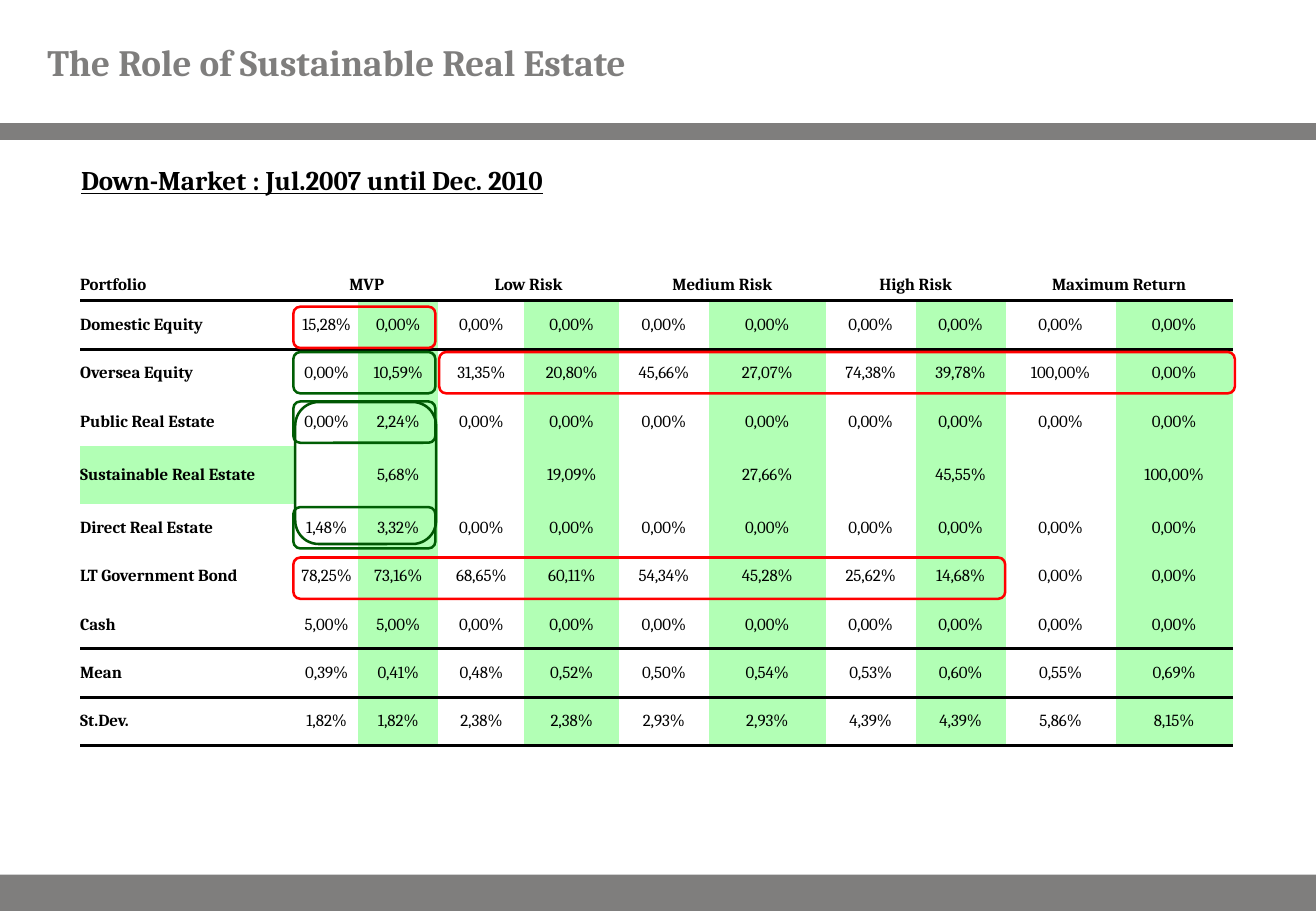
from lxml import etree
from pptx import Presentation
from pptx.dml.color import RGBColor
from pptx.enum import shapes, text
from pptx.oxml import ns
from pptx.util import Pt

GRAY = RGBColor(0x7F, 0x7E, 0x7D)
BLACK = RGBColor(0x00, 0x00, 0x00)
MINT = RGBColor(0xB2, 0xFF, 0xB5)
RED = RGBColor(0xFF, 0x00, 0x00)
GREEN = RGBColor(0x00, 0x5E, 0x04)
DARK_GREEN = RGBColor(0x00, 0x56, 0x03)

FONT = "Cambria"
WIDTH, HEIGHT = 780, 540
PLAIN_TABLE_STYLE = "{2D5ABB26-0587-4C30-8999-92F81FD0307C}"

GROUPS = ["MVP", "Low Risk", "Medium Risk", "High Risk", "Maximum Return"]
ROWS = [
    ("Domestic Equity", "15,28%|0,00%|0,00%|0,00%|0,00%|0,00%|0,00%|0,00%|0,00%|0,00%"),
    ("Oversea Equity", "0,00%|10,59%|31,35%|20,80%|45,66%|27,07%|74,38%|39,78%|100,00%|0,00%"),
    ("Public Real Estate", "0,00%|2,24%|0,00%|0,00%|0,00%|0,00%|0,00%|0,00%|0,00%|0,00%"),
    ("Sustainable Real Estate", "|5,68%||19,09%||27,66%||45,55%||100,00%"),
    ("Direct Real Estate", "1,48%|3,32%|0,00%|0,00%|0,00%|0,00%|0,00%|0,00%|0,00%|0,00%"),
    ("LT Government Bond", "78,25%|73,16%|68,65%|60,11%|54,34%|45,28%|25,62%|14,68%|0,00%|0,00%"),
    ("Cash", "5,00%|5,00%|0,00%|0,00%|0,00%|0,00%|0,00%|0,00%|0,00%|0,00%"),
    ("Mean", "0,39%|0,41%|0,48%|0,52%|0,50%|0,54%|0,53%|0,60%|0,55%|0,69%"),
    ("St.Dev.", "1,82%|1,82%|2,38%|2,38%|2,93%|2,93%|4,39%|4,39%|5,86%|8,15%"),
]
COLUMN_WIDTHS = [127.4, 37.4, 47.5, 51.1, 56, 53.3, 69.3, 53.3, 53.3, 65.3, 69.3]
HEADER_HEIGHT, ROW_HEIGHT, SUSTAINABLE_HEIGHT = 19.3, 28.65, 34.4
SUSTAINABLE_ROW = 4
RULED_ROWS = (0, 7, 9)

# Highlight frames: left, top, width, height from the table corner, colour
FRAMES = [
    (212.8, 49.6, 471.6, 24.5, RED),
    (126.4, 78.9, 84.2, 24.5, GREEN),
    (126.4, 141.5, 84.2, 24.5, GREEN),
    (126.4, 171.4, 421.9, 24.5, RED),
    (126.4, 22.7, 84.2, 24.5, RED),
    (126.4, 49.6, 84.2, 24.5, GREEN),
    (127.5, 79.2, 83.5, 84.2, DARK_GREEN),
]


def format_text(paragraph, size, color, bold=True, underline=None):
    for run in paragraph.runs:
        run.font.name = FONT
        run.font.size = Pt(size)
        run.font.bold = bold
        run.font.underline = underline
        run.font.color.rgb = color


def add_bars(slide, left, width, line_y, footer_top):
    rule = slide.shapes.add_connector(
        shapes.MSO_CONNECTOR.STRAIGHT, Pt(left), Pt(line_y), Pt(left + width), Pt(line_y))
    rule.line.color.rgb = GRAY
    rule.line.width = Pt(10)
    properties = rule.element.find(ns.qn("p:spPr"))
    etree.SubElement(properties, ns.qn("a:effectLst"))
    footer = slide.shapes.add_shape(
        shapes.MSO_SHAPE.RECTANGLE, Pt(left), Pt(footer_top), Pt(width), Pt(HEIGHT - footer_top))
    footer.shadow.inherit = False
    footer.fill.solid()
    footer.fill.fore_color.rgb = GRAY
    footer.line.fill.background()


def add_title(slide, left, top, width, height):
    title = slide.shapes.title
    title.left, title.top, title.width, title.height = Pt(left), Pt(top), Pt(width), Pt(height)
    frame = title.text_frame
    frame.text = "The Role of Sustainable Real Estate"
    frame.auto_size = text.MSO_AUTO_SIZE.NONE
    frame.vertical_anchor = text.MSO_ANCHOR.MIDDLE
    frame.margin_left = frame.margin_right = Pt(28)
    frame.margin_top = frame.margin_bottom = 0
    frame.paragraphs[0].alignment = text.PP_ALIGN.LEFT
    format_text(frame.paragraphs[0], 22, GRAY)


def add_subtitle(slide, left, top, width, height):
    box = slide.shapes.add_textbox(Pt(left), Pt(top), Pt(width), Pt(height))
    box.text_frame.word_wrap = True
    box.text_frame.text = "Down-Market : Jul.2007 until Dec. 2010"
    format_text(box.text_frame.paragraphs[0], 16, BLACK, underline=True)


def add_border(cell, side):
    properties = cell._tc.get_or_add_tcPr()
    line = etree.SubElement(properties, ns.qn("a:" + side), w=str(Pt(2)))
    fill = etree.SubElement(line, ns.qn("a:solidFill"))
    etree.SubElement(fill, ns.qn("a:srgbClr"), val=str(BLACK))


def format_cell(cell, row, column):
    cell.margin_left = cell.margin_right = cell.margin_top = cell.margin_bottom = 0
    cell.vertical_anchor = text.MSO_ANCHOR.MIDDLE
    if row - 1 in RULED_ROWS:
        add_border(cell, "lnT")
    if row in RULED_ROWS:
        add_border(cell, "lnB")
    sustainable_column = row > 0 and column > 0 and column % 2 == 0
    if sustainable_column or (row, column) == (SUSTAINABLE_ROW, 0):
        cell.fill.solid()
        cell.fill.fore_color.rgb = MINT
    else:
        cell.fill.background()
    paragraph = cell.text_frame.paragraphs[0]
    paragraph.alignment = text.PP_ALIGN.CENTER if column else text.PP_ALIGN.LEFT
    format_text(paragraph, 10, BLACK, bold=row == 0 or column == 0)


def add_portfolio_table(slide, left, top):
    heights = [HEADER_HEIGHT] + [ROW_HEIGHT] * len(ROWS)
    heights[SUSTAINABLE_ROW] = SUSTAINABLE_HEIGHT
    table = slide.shapes.add_table(
        len(heights), len(COLUMN_WIDTHS), Pt(left), Pt(top),
        Pt(sum(COLUMN_WIDTHS)), Pt(sum(heights))).table
    table.first_row = table.horz_banding = False
    table._tbl.tblPr.find(ns.qn("a:tableStyleId")).text = PLAIN_TABLE_STYLE
    for column, width in zip(table.columns, COLUMN_WIDTHS):
        column.width = Pt(width)
    for row, height in zip(table.rows, heights):
        row.height = Pt(height)

    # Each heading spans a pair of columns
    header = ["Portfolio"]
    for group in GROUPS:
        header += [group, ""]
    for column in range(1, len(COLUMN_WIDTHS), 2):
        table.cell(0, column).merge(table.cell(0, column + 1))

    lines = [header] + [[label] + values.split("|") for label, values in ROWS]
    for row, line in enumerate(lines):
        for column, value in enumerate(line):
            cell = table.cell(row, column)
            if value:
                cell.text_frame.text = value
            format_cell(cell, row, column)


def add_highlights(slide, left, top):
    for x, y, width, height, color in FRAMES:
        frame = slide.shapes.add_shape(
            shapes.MSO_SHAPE.ROUNDED_RECTANGLE,
            Pt(left + x), Pt(top + y), Pt(width), Pt(height))
        frame.shadow.inherit = False
        frame.fill.background()
        frame.line.color.rgb = color
        frame.line.width = Pt(1.5)


def main():
    presentation = Presentation()
    presentation.slide_width, presentation.slide_height = Pt(WIDTH), Pt(HEIGHT)
    slide = presentation.slides.add_slide(presentation.slide_layouts[5])
    add_bars(slide, 0, WIDTH, 77.8, 518.4)
    add_title(slide, 0, 0, WIDTH, 73)
    add_subtitle(slide, 41, 93.6, 537, 26.6)
    add_portfolio_table(slide, 47.5, 159.1)
    add_highlights(slide, 47.5, 159.1)
    presentation.save("out.pptx")


if __name__ == "__main__":
    main()
